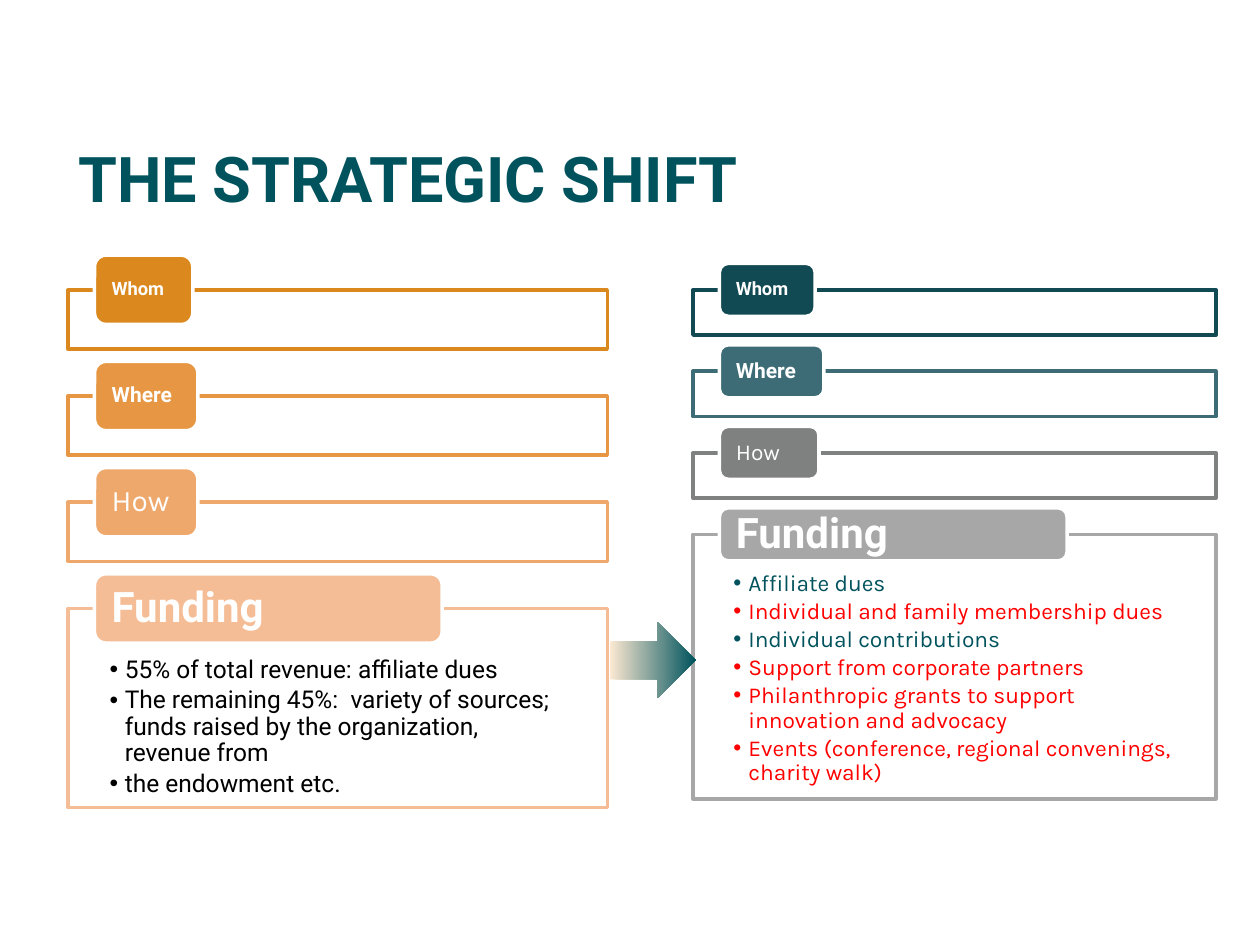
from lxml import etree
from pptx import Presentation
from pptx.dml.color import RGBColor
from pptx.enum import shapes, text
from pptx.oxml import ns
from pptx.util import Inches, Pt

HUES = {"teal": "00535D", "red": "FF0000", "black": "000000",
        "white": "FFFFFF", "cream": "FCE9D2"}


def style(par, font, size, hue, bold=False):
    for run in par.runs:
        run.font.name, run.font.size, run.font.bold = font, Pt(size), bold
        run.font.color.rgb = RGBColor.from_string(hue)


def paint(shape, fill, line):
    shape.shadow.inherit = False
    shape.fill.solid()
    shape.fill.fore_color.rgb = RGBColor.from_string(fill)
    shape.line.color.rgb = RGBColor.from_string(line)
    shape.line.width = Pt(2)


deck = Presentation()
deck.slide_width, deck.slide_height = Inches(10), Inches(7.5)
slide = deck.slides.add_slide(deck.slide_layouts[3])
title, *lists = slide.placeholders

# Title
title.left, title.top = Inches(0.52), Inches(1.08)
title.width, title.height = Inches(8.88), Inches(0.65)
frame = title.text_frame
frame.text = "THE STRATEGIC SHIFT"
frame.auto_size = text.MSO_AUTO_SIZE.NONE
frame.vertical_anchor = text.MSO_ANCHOR.MIDDLE
frame.paragraphs[0].alignment = text.PP_ALIGN.LEFT
style(frame.paragraphs[0], "Roboto", 36, HUES["teal"], True)

# Columns: before and after the shift
cols = [
    dict(left=0.54, wide=4.28, pitch=0.843, box=0.47, last=1.58, tab=0.55,
         hues=["DB891E", "E79743", "EFA86C", "F5BD96"],
         tabs=[0.78, 0.82, 0.82, 2.76], how=17,
         pad=(0.33, 0.39), font="Roboto", size=14, gap=2.1,
         items=[("55% of total revenue: affiliate dues", "black"),
                ("The remaining 45%:  variety of sources; funds raised by "
                 "the organization, revenue from", "black"),
                ("the endowment etc.", "black")]),
    dict(left=5.5, wide=4.15, pitch=0.647, box=0.36, last=2.1, tab=0.42,
         hues=["124A54", "3D6C76", "7F8181", "A7A7A7"],
         tabs=[0.76, 0.83, 0.79, 2.76], how=13,
         pad=(0.32, 0.3), font="Karla", size=13, gap=1.9,
         items=[("Affiliate dues", "teal"),
                ("Individual and family membership dues", "red"),
                ("Individual contributions", "teal"),
                ("Support from corporate partners", "red"),
                ("Philanthropic grants to support innovation and advocacy",
                 "red"),
                ("Events (conference, regional convenings, charity walk)",
                 "red")]),
]

for col, body in zip(cols, lists):
    names = [("Whom", 10.5), ("Where", 12), ("How", col["how"]),
             ("Funding", 24)]
    for i, (name, size) in enumerate(names):
        top, hue = 2.3 + i * col["pitch"], col["hues"][i]

        # Outlined box; the last one is the list itself
        if name == "Funding":
            box = body
            box.left, box.top = Inches(col["left"]), Inches(top)
            box.width, box.height = Inches(col["wide"]), Inches(col["last"])
        else:
            box = slide.shapes.add_shape(
                shapes.MSO_SHAPE.RECTANGLE, Inches(col["left"]), Inches(top),
                Inches(col["wide"]), Inches(col["box"]))
        paint(box, HUES["white"], hue)

        # Label tab centred on the top edge of the box
        tab = slide.shapes.add_shape(
            shapes.MSO_SHAPE.ROUNDED_RECTANGLE, Inches(col["left"] + 0.21),
            Inches(top - col["tab"] / 2), Inches(col["tabs"][i]),
            Inches(col["tab"]))
        paint(tab, hue, HUES["white"])
        frame = tab.text_frame
        frame.text = name
        frame.word_wrap = True
        frame.vertical_anchor = text.MSO_ANCHOR.MIDDLE
        frame.margin_left = frame.margin_right = Inches(0.11)
        frame.margin_top = frame.margin_bottom = 0
        par = frame.paragraphs[0]
        par.alignment, par.line_spacing = text.PP_ALIGN.LEFT, 0.9
        how = name == "How"
        style(par, "Karla" if how else "Roboto", size, HUES["white"], not how)

    # Funding list
    frame = body.text_frame
    frame.text = "\n".join(item for item, _ in col["items"])
    frame.auto_size = text.MSO_AUTO_SIZE.NONE
    frame.word_wrap = True
    frame.vertical_anchor = text.MSO_ANCHOR.TOP
    frame.margin_left = frame.margin_right = Inches(col["pad"][0])
    frame.margin_top, frame.margin_bottom = Inches(col["pad"][1]), Inches(0.1)
    for i, (par, (_, hue)) in enumerate(zip(frame.paragraphs, col["items"])):
        props = par._p.get_or_add_pPr()
        props.set("marL", str(Inches(0.12)))
        props.set("indent", str(-Inches(0.12)))
        tint = etree.SubElement(props, ns.qn("a:buClr"))
        etree.SubElement(tint, ns.qn("a:srgbClr"), val=HUES[hue])
        etree.SubElement(props, ns.qn("a:buChar"), char="•")
        par.line_spacing = 0.9
        par.space_before = Pt(col["gap"] if i else 0)
        par.space_after = Pt(0)
        style(par, col["font"], col["size"], HUES[hue])

# Arrow between the funding boxes
arrow = slide.shapes.add_shape(
    shapes.MSO_SHAPE.RIGHT_ARROW, Inches(4.84), Inches(4.94),
    Inches(0.68), Inches(0.6))
arrow.shadow.inherit = False
arrow.line.fill.background()
arrow.fill.gradient()
arrow.fill.gradient_angle = 0
for stop, hue in zip(arrow.fill.gradient_stops, ("cream", "teal")):
    stop.color.rgb = RGBColor.from_string(HUES[hue])

# Unused footer placeholders
for spare in lists[2:]:
    spare.element.getparent().remove(spare.element)

deck.save("out.pptx")
